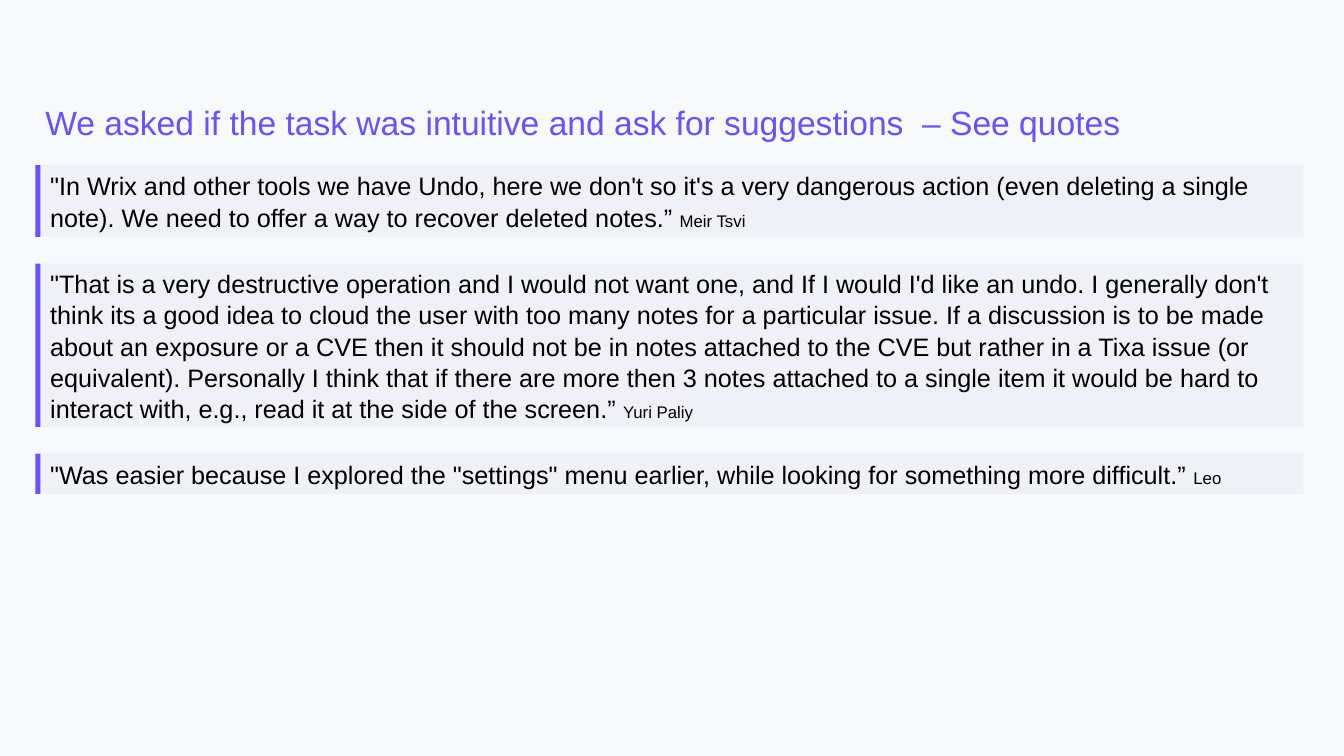
from dataclasses import dataclass
from lxml.etree import SubElement
from pptx import Presentation
from pptx.dml.color import RGBColor
from pptx.enum.shapes import MSO_SHAPE
from pptx.enum.text import MSO_ANCHOR, PP_ALIGN
from pptx.oxml.ns import qn
from pptx.util import Pt


@dataclass(frozen=True)
class Theme:
    background: str = "F8F9FA"
    accent: str = "6653FF"
    panel: str = "BEC6EA"
    panel_opacity: int = 15000
    text: str = "000000"
    font: str = "Arial"
    title_size: float = 24
    quote_size: float = 18
    author_size: float = 12


THEME = Theme()
PAGE_WIDTH, PAGE_HEIGHT = 960, 540
PANEL_LEFT, PANEL_WIDTH, BAR_WIDTH = 28.8, 902.2, 3.6
QUOTES = [
    (118, 51.2,
     "\"In Wrix and other tools we have Undo, here we don't so it's a very dangerous action "
     "(even deleting a single note). We need to offer a way to recover deleted notes.” ",
     "Meir Tsvi"),
    (188.4, 116.6,
     "\"That is a very destructive operation and I would not want one, and If I would I'd like "
     "an undo. I generally don't think its a good idea to cloud the user with too many notes for "
     "a particular issue. If a discussion is to be made about an exposure or a CVE then it should "
     "not be in notes attached to the CVE but rather in a Tixa issue (or equivalent). Personally "
     "I think that if there are more then 3 notes attached to a single item it would be hard to "
     "interact with, e.g., read it at the side of the screen.” ",
     "Yuri Paliy"),
    (324, 28.8,
     "\"Was easier because I explored the \"settings\" menu earlier, while looking for something "
     "more difficult.” ",
     "Leo"),
]


def style_run(run, size, color):
    run.font.name = THEME.font
    run.font.size = Pt(size)
    run.font.color.rgb = RGBColor.from_string(color)


def add_rectangle(slide, left, top, width, height, color):
    shape = slide.shapes.add_shape(
        MSO_SHAPE.RECTANGLE, Pt(left), Pt(top), Pt(width), Pt(height))
    shape.shadow.inherit = False
    shape.fill.solid()
    shape.fill.fore_color.rgb = RGBColor.from_string(color)
    shape.line.fill.background()
    return shape


def add_title(slide, left, top, width, height, title):
    text_frame = slide.shapes.add_textbox(
        Pt(left), Pt(top), Pt(width), Pt(height)).text_frame
    text_frame.word_wrap = True
    text_frame.margin_left = text_frame.margin_right = Pt(3.6)
    text_frame.text = title
    style_run(text_frame.paragraphs[0].runs[0], THEME.title_size, THEME.accent)


def add_quote(slide, left, top, width, height, quote, author):
    panel = add_rectangle(slide, left, top, width, height, THEME.panel)
    color = panel.fill._xPr.find(qn("a:solidFill")).find(qn("a:srgbClr"))
    SubElement(color, qn("a:alpha")).set("val", str(THEME.panel_opacity))
    text_frame = panel.text_frame
    text_frame.word_wrap = True
    text_frame.vertical_anchor = MSO_ANCHOR.MIDDLE
    text_frame.text = quote
    paragraph = text_frame.paragraphs[0]
    paragraph.alignment = PP_ALIGN.LEFT
    paragraph.line_spacing = 1.04
    paragraph.add_run().text = author
    for run, size in zip(paragraph.runs, (THEME.quote_size, THEME.author_size)):
        style_run(run, size, THEME.text)
    add_rectangle(slide, left - BAR_WIDTH, top, BAR_WIDTH, height, THEME.accent)


def main():
    presentation = Presentation()
    presentation.slide_width, presentation.slide_height = Pt(PAGE_WIDTH), Pt(PAGE_HEIGHT)
    slide = presentation.slides.add_slide(presentation.slide_layouts[6])
    slide.background.fill.solid()
    slide.background.fill.fore_color.rgb = RGBColor.from_string(THEME.background)
    add_title(slide, PANEL_LEFT, 69.2, 849.6, 90.7,
              "We asked if the task was intuitive and ask for suggestions  – See quotes")
    for top, height, quote, author in QUOTES:
        add_quote(slide, PANEL_LEFT, top, PANEL_WIDTH, height, quote, author)
    presentation.save("out.pptx")


if __name__ == "__main__":
    main()
